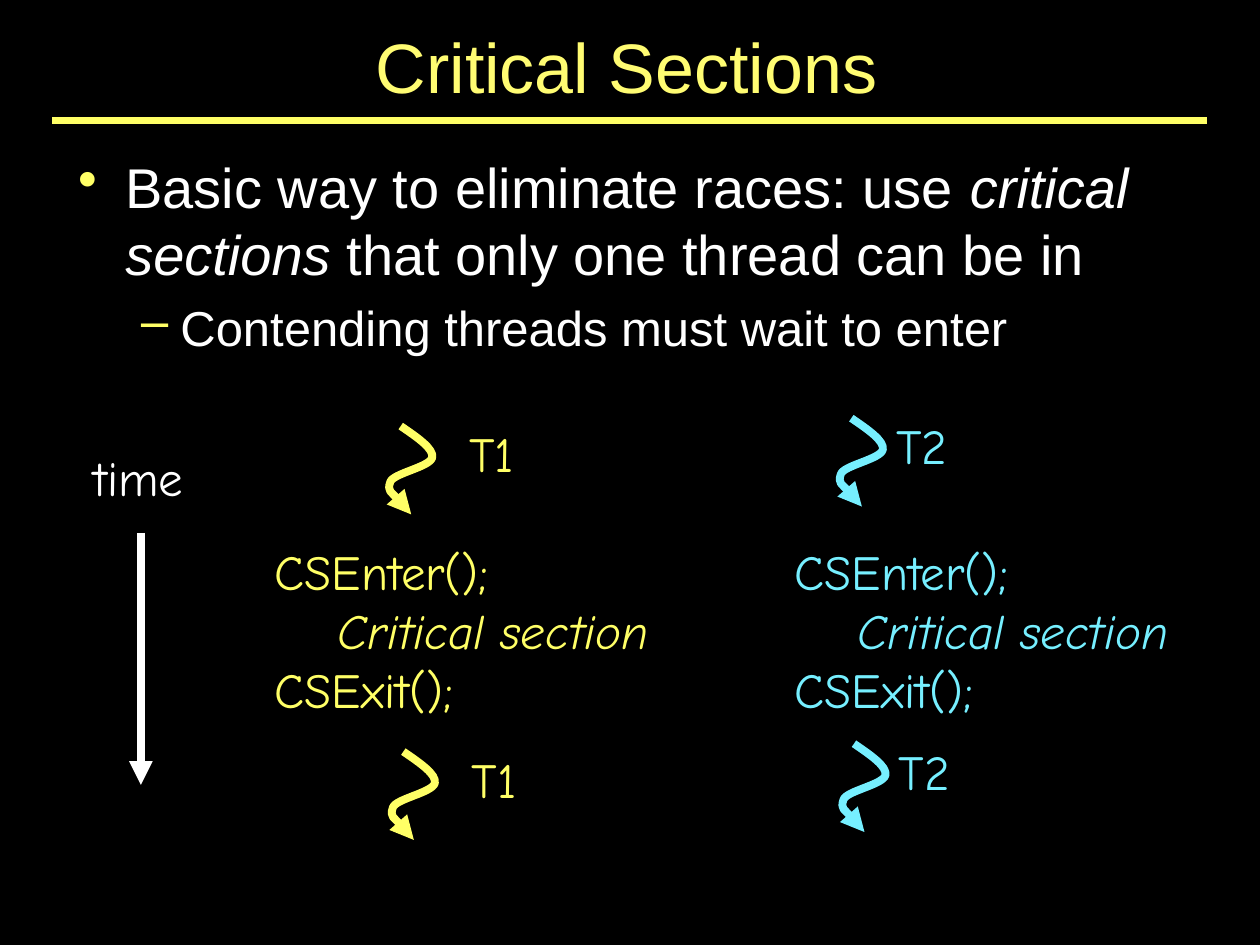
import pptx
import pptx.util
import pptx.dml.color
import pptx.enum.shapes
import pptx.enum.text
import pptx.oxml
import pptx.oxml.ns
from dataclasses import dataclass

Pt = pptx.util.Pt
qn = pptx.oxml.ns.qn
ALIGN = pptx.enum.text.PP_ALIGN
ANCHOR = pptx.enum.text.MSO_ANCHOR


@dataclass(frozen=True)
class Theme:
    back: str = "000000"
    text: str = "FFFFFF"
    title: str = "FFFC72"
    gold: str = "FFFF66"
    blue: str = "76EFFF"
    sans: str = "Arial"
    hand: str = "Comic Neue"
    head: int = 40
    body: int = 32
    small: int = 28
    rule: float = 4
    stroke: float = 4.5


THEME = Theme()

# Bezier points of the thread squiggle, measured from its start
CURVE = [(9.5, 6.5), (19, 13), (18, 18),
         (16.5, 23.5), (-4.5, 27), (-6, 32),
         (-8, 37.5), (3.5, 46.5), (6, 50.5)]


def rgb(color):
    return pptx.dml.color.RGBColor.from_string(color)


def style(para, size, color, face):
    para.font.size = Pt(size)
    para.font.color.rgb = rgb(color)
    para.font.name = face


def add_box(slide, box, anchor, wrap=True):
    frame = slide.shapes.add_textbox(*map(Pt, box)).text_frame
    frame.word_wrap = wrap
    frame.vertical_anchor = anchor
    return frame


def add_label(slide, box, text, color):
    para = add_box(slide, box, ANCHOR.MIDDLE, False).paragraphs[0]
    para.text = text
    para.alignment = ALIGN.CENTER
    style(para, THEME.small, color, THEME.hand)


def indent(para, left, first):
    props = para._p.get_or_add_pPr()
    props.set("marL", str(Pt(left)))
    props.set("indent", str(Pt(first)))
    return props


def add_mark(para, left, hang, mark):
    props = indent(para, left, -hang)
    color = props.makeelement(qn("a:buClr"), {})
    color.append(color.makeelement(qn("a:srgbClr"), {"val": THEME.gold}))
    props.append(color)
    props.append(props.makeelement(qn("a:buChar"), {"char": mark}))


def set_line(shape, color, width, arrow=False):
    shape.line.color.rgb = rgb(color)
    shape.line.width = Pt(width)
    if arrow:
        line = shape.line._get_or_add_ln()
        line.append(line.makeelement(qn("a:tailEnd"), {"type": "triangle"}))


def add_line(slide, start, end, color, width, arrow=False):
    kind = pptx.enum.shapes.MSO_CONNECTOR.STRAIGHT
    line = slide.shapes.add_connector(kind, *map(Pt, start + end))
    set_line(line, color, width, arrow)
    props = line._element.spPr
    props.append(props.makeelement(qn("a:effectLst"), {}))


def add_curl(slide, left, top, color):
    build = slide.shapes.build_freeform(0, 0)
    build.add_line_segments([(Pt(x), Pt(y)) for x, y in CURVE], close=False)
    curl = build.convert_to_shape(Pt(left), Pt(top))
    # Join each three straight segments into one Bezier curve
    steps = list(curl._element.iter(qn("a:lnTo")))
    for i in range(0, len(steps), 3):
        bend = steps[i].makeelement(qn("a:cubicBezTo"), {})
        steps[i].addprevious(bend)
        for step in steps[i:i + 3]:
            bend.append(step[0])
            step.getparent().remove(step)
    curl.shadow.inherit = False
    curl.fill.background()
    set_line(curl, color, THEME.stroke, True)


def add_title(slide, box):
    left, top, width, height = box
    base = top + height
    add_line(slide, (left, base), (left + width, base), THEME.gold, THEME.rule)
    frame = add_box(slide, (left + 22, top, 612, height - 4), ANCHOR.BOTTOM)
    para = frame.paragraphs[0]
    para.text = "Critical Sections"
    para.alignment = ALIGN.CENTER
    style(para, THEME.head, THEME.title, THEME.sans)


def add_body(slide, box):
    frame = add_box(slide, box, ANCHOR.TOP)
    frame.margin_top = Pt(7)
    main = frame.paragraphs[0]
    add_mark(main, 27, 27, "•")
    for text, slant in (("Basic way to eliminate races: use ", False),
                        ("critical sections", True),
                        (" that only one thread can be in", False)):
        run = main.add_run()
        run.text = text
        run.font.italic = slant
    style(main, THEME.body, THEME.text, THEME.sans)

    sub = frame.add_paragraph()
    sub.text = "Contending threads must wait to enter"
    sub.level = 1
    sub.space_before = Pt(6)
    add_mark(sub, 58.5, 22.5, "–")
    style(sub, THEME.small, THEME.text, THEME.sans)


def add_time(slide, box):
    left, top, width, height = box
    add_label(slide, (left, top, width, 41), "time", THEME.text)
    mid = left + 38
    add_line(slide, (mid, top + 52.5), (mid, top + height),
             THEME.text, THEME.stroke, True)


def add_thread(slide, box, name, color, inset, gap, wide):
    left, top, width, height = box
    # Thread before and after the critical section
    for right, down in ((0, 0), (1.5, 186)):
        x, y = left + inset + right, top + down
        add_curl(slide, x, y + 5, color)
        add_label(slide, (x + gap, y, wide, 41), name, color)

    # Code that the thread runs
    frame = add_box(slide, (left, top + height - 160, width, 108),
                    ANCHOR.MIDDLE)
    lines = ("CSEnter();", "Critical section", "CSExit();")
    for i, text in enumerate(lines):
        para = frame.add_paragraph() if i else frame.paragraphs[0]
        para.text = text
        style(para, THEME.small, color, THEME.hand)
        if i == 1:
            para.level = 1
            indent(para, 36, 0)
            para.font.italic = True


def main():
    deck = pptx.Presentation()
    deck.slide_width, deck.slide_height = Pt(720), Pt(540)
    slide = deck.slides.add_slide(deck.slide_layouts[6])
    slide.background.fill.solid()
    slide.background.fill.fore_color.rgb = rgb(THEME.back)

    add_title(slide, (30, 10, 660, 59))
    add_body(slide, (37.5, 80, 652, 398))
    add_time(slide, (42.5, 252, 73, 196.5))
    add_thread(slide, (150, 238.5, 261, 227.5), "T1", THEME.gold, 79, 29, 46)
    add_thread(slide, (447, 234, 261, 232), "T2", THEME.blue, 39.5, 15, 50.5)
    deck.save("out.pptx")


if __name__ == "__main__":
    main()
